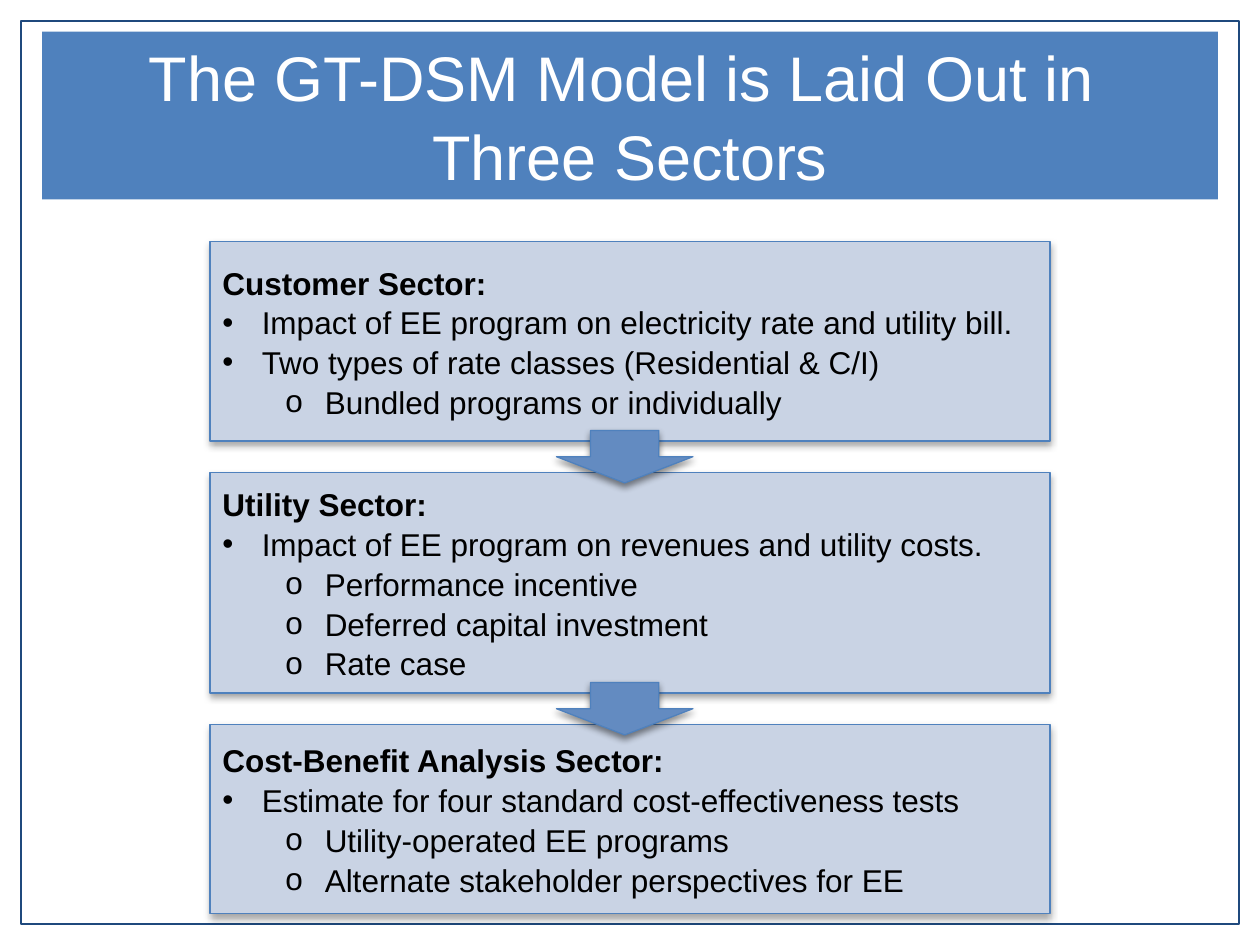
from lxml.etree import SubElement
from pptx import Presentation
from pptx.dml.color import RGBColor
from pptx.enum.shapes import MSO_SHAPE
from pptx.enum.text import MSO_ANCHOR, MSO_AUTO_SIZE, PP_ALIGN
from pptx.oxml.ns import qn
from pptx.util import Pt


def color(hex_string):
    return RGBColor.from_string(hex_string)


def add_block(shape_type, left, top, width, height, fill, opacity):
    shape = slide.shapes.add_shape(shape_type, Pt(left), Pt(top), Pt(width), Pt(height))
    shape.fill.solid()
    shape.fill.fore_color.rgb = color(fill)
    shape.line.color.rgb = color("4F81BD")
    shape.line.width = Pt(0.75)
    shape.shadow.inherit = False
    effects = shape._element.spPr.find(qn("a:effectLst"))
    shadow = SubElement(effects, qn("a:outerShdw"), blurRad=str(Pt(4)), dist=str(Pt(2)),
                        dir="5400000", rotWithShape="0")
    shadow_color = SubElement(shadow, qn("a:srgbClr"), val="000000")
    SubElement(shadow_color, qn("a:alpha"), val=str(opacity * 1000))
    return shape


presentation = Presentation()
presentation.slide_width, presentation.slide_height = Pt(720), Pt(540)
slide = presentation.slides.add_slide(presentation.slide_layouts[5])

frame = slide.shapes.add_shape(MSO_SHAPE.RECTANGLE, Pt(12), Pt(12), Pt(696), Pt(516))
frame.fill.background()
frame.line.color.rgb = color("1F497D")
frame.line.width = Pt(0.75)
frame.shadow.inherit = False

title = slide.shapes.title
title.left, title.top, title.width, title.height = Pt(24), Pt(18), Pt(672), Pt(96)
title.fill.solid()
title.fill.fore_color.rgb = color("4F81BD")
title.text_frame.text = "The GT-DSM Model is Laid Out in \vThree Sectors"
title.text_frame.auto_size = MSO_AUTO_SIZE.NONE
title.text_frame.vertical_anchor = MSO_ANCHOR.BOTTOM
paragraph = title.text_frame.paragraphs[0]
paragraph.alignment = PP_ALIGN.CENTER
paragraph.line_spacing = 1.05
for run in paragraph.runs:
    run.font.name = "Arial"
    run.font.size = Pt(36)
    run.font.color.rgb = color("FFFFFF")

sectors = [
    (138, 114, [
        (0, "Customer Sector:"),
        (1, "Impact of EE program on electricity rate and utility bill."),
        (1, "Two types of rate classes (Residential & C/I)"),
        (2, "Bundled programs or individually"),
    ]),
    (270, 126, [
        (0, "Utility Sector:"),
        (1, "Impact of EE program on revenues and utility costs."),
        (2, "Performance incentive"),
        (2, "Deferred capital investment"),
        (2, "Rate case"),
    ]),
    (414, 108, [
        (0, "Cost-Benefit Analysis Sector:"),
        (1, "Estimate for four standard cost-effectiveness tests"),
        (2, "Utility-operated EE programs"),
        (2, "Alternate stakeholder perspectives for EE"),
    ]),
]
bullets = {1: ("•", 22.5), 2: ("o", 58.5)}

for top, height, lines in sectors:
    box = add_block(MSO_SHAPE.RECTANGLE, 120, top, 480, height, "C9D3E4", 35)
    text_frame = box.text_frame
    text_frame.word_wrap = True
    text_frame.vertical_anchor = MSO_ANCHOR.MIDDLE
    text_frame.text = "\n".join(text for level, text in lines)
    for paragraph, (level, text) in zip(text_frame.paragraphs, lines):
        paragraph.alignment = PP_ALIGN.LEFT
        paragraph.line_spacing = 1.05
        if level:
            character, margin = bullets[level]
            paragraph.level = level
            properties = paragraph._p.get_or_add_pPr()
            properties.set("marL", str(Pt(margin)))
            properties.set("indent", str(Pt(-22.5)))
            SubElement(properties, qn("a:buFont"), typeface="Arial")
            SubElement(properties, qn("a:buChar"), char=character)
        font = paragraph.runs[0].font
        font.name = "Arial"
        font.size = Pt(18)
        font.bold = level == 0
        font.color.rgb = color("000000")

for top, height, lines in sectors[:-1]:
    add_block(MSO_SHAPE.DOWN_ARROW, 318, top + height - 6, 78, 30, "638BC1", 45)

presentation.save("out.pptx")
